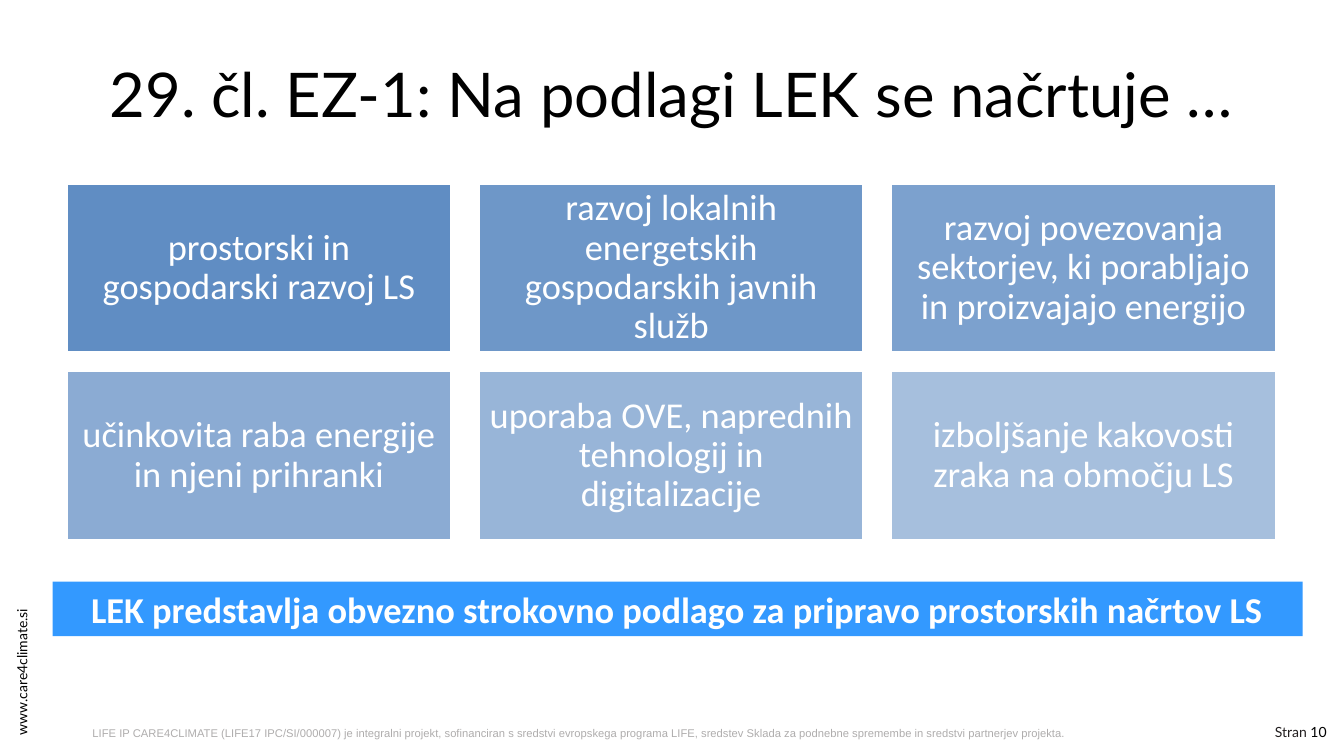
import pptx
import pptx.dml.color
import pptx.enum.shapes
import pptx.enum.text
import pptx.util
from lxml import etree
from pptx.oxml.ns import qn

Pt = pptx.util.Pt
ALIGN = pptx.enum.text.PP_ALIGN
ANCHOR = pptx.enum.text.MSO_ANCHOR
RECTANGLE = pptx.enum.shapes.MSO_SHAPE.RECTANGLE


def colour(value):
    return pptx.dml.color.RGBColor.from_string(value)


class Page:
    heading_font = "Lato"
    body_font = "Calibri"
    black = "000000"
    white = "FFFFFF"

    def __init__(self, deck):
        self.slide = deck.slides.add_slide(deck.slide_layouts[5])

    def place(self, shape, left, top, width, height):
        shape.left, shape.top = Pt(left), Pt(top)
        shape.width, shape.height = Pt(width), Pt(height)

    def style(self, paragraph, font, size, tint, align, bold=False):
        paragraph.alignment = align
        paragraph.font.name = font
        paragraph.font.size = Pt(size)
        paragraph.font.bold = bold
        paragraph.font.color.rgb = colour(tint)

    def title(self, text, *bounds):
        title = self.slide.shapes.title
        self.place(title, *bounds)
        frame = title.text_frame
        frame.text = text
        frame.word_wrap = True
        frame.vertical_anchor = ANCHOR.MIDDLE
        self.style(frame.paragraphs[0], self.heading_font, 44, self.black, ALIGN.CENTER)

    def label(self, spans, bounds, font, size, align=ALIGN.LEFT, rotation=0):
        """Add a one-line text box; spans are (text, colour) pairs."""
        box = self.slide.shapes.add_textbox(*map(Pt, bounds))
        box.rotation = rotation
        frame = box.text_frame
        frame.word_wrap = True
        frame.vertical_anchor = ANCHOR.MIDDLE
        paragraph = frame.paragraphs[0]
        self.style(paragraph, font, size, spans[0][1], align)
        for text, tint in spans:
            span = paragraph.add_run()
            span.text = text
            span.font.color.rgb = colour(tint)

    def block(self, text, bounds, fill, opacity=100, outline=None, inset=7.2,
              spacing=1.0, bold=False):
        """Add a filled rectangle with centred white text."""
        shape = self.slide.shapes.add_shape(RECTANGLE, *map(Pt, bounds))
        shape.shadow.inherit = False
        shape.fill.solid()
        shape.fill.fore_color.rgb = colour(fill)
        if opacity < 100:
            solid = shape.fill._xPr.find(qn("a:solidFill"))
            etree.SubElement(solid[0], qn("a:alpha")).set("val", str(opacity * 1000))
        if outline:
            shape.line.color.rgb = colour(outline)
            shape.line.width = Pt(2)
        else:
            shape.line.fill.background()
        frame = shape.text_frame
        frame.text = text
        frame.word_wrap = True
        frame.vertical_anchor = ANCHOR.MIDDLE
        frame.margin_left = frame.margin_right = Pt(inset)
        frame.margin_top = frame.margin_bottom = Pt(3.6)
        paragraph = frame.paragraphs[0]
        paragraph.line_spacing = spacing
        self.style(paragraph, self.body_font, 26, self.white, ALIGN.CENTER, bold)


def main():
    deck = pptx.Presentation()
    deck.slide_width, deck.slide_height = Pt(960), Pt(540)
    page = Page(deck)

    # Margin texts
    page.label([("www.care4climate.si", page.black)], (-50.4, 456.5, 131.8, 19.4),
               page.heading_font, 10, rotation=270)
    page.label([("Stran ", "231F20"), ("10", page.black)], (875.5, 513.4, 79.2, 19.4),
               page.heading_font, 10, ALIGN.RIGHT)
    page.label([("LIFE IP CARE4CLIMATE (LIFE17 IPC/SI/000007) je integralni projekt, "
                 "sofinanciran s sredstvi evropskega programa LIFE, sredstev Sklada za "
                 "podnebne spremembe in sredstvi partnerjev projekta.", "AFADAD")],
               (59, 514.8, 832.3, 17), "Arial", 8)

    # Title
    page.title("29. čl. EZ-1: Na podlagi LEK se načrtuje …", 48, 21.6, 864, 90)

    # Grid of topics, fading from first to last
    topics = [
        "prostorski in gospodarski razvoj LS",
        "razvoj lokalnih energetskih gospodarskih javnih služb",
        "razvoj povezovanja sektorjev, ki porabljajo in proizvajajo energijo",
        "učinkovita raba energije in njeni prihranki",
        "uporaba OVE, naprednih tehnologij in digitalizacije",
        "izboljšanje kakovosti zraka na območju LS",
    ]
    for index, topic in enumerate(topics):
        row, column = divmod(index, 3)
        bounds = (47.5 + column * 294.5, 131 + row * 134, 275, 121)
        page.block(topic, bounds, "4F81BD", opacity=90 - 8 * index,
                   outline=page.white, inset=7.5, spacing=0.9)

    # Conclusion banner
    page.block("LEK predstavlja obvezno strokovno podlago za pripravo prostorskih načrtov LS",
               (37.5, 415.5, 893, 39), "3399FF", bold=True)

    deck.save("out.pptx")


if __name__ == "__main__":
    main()
